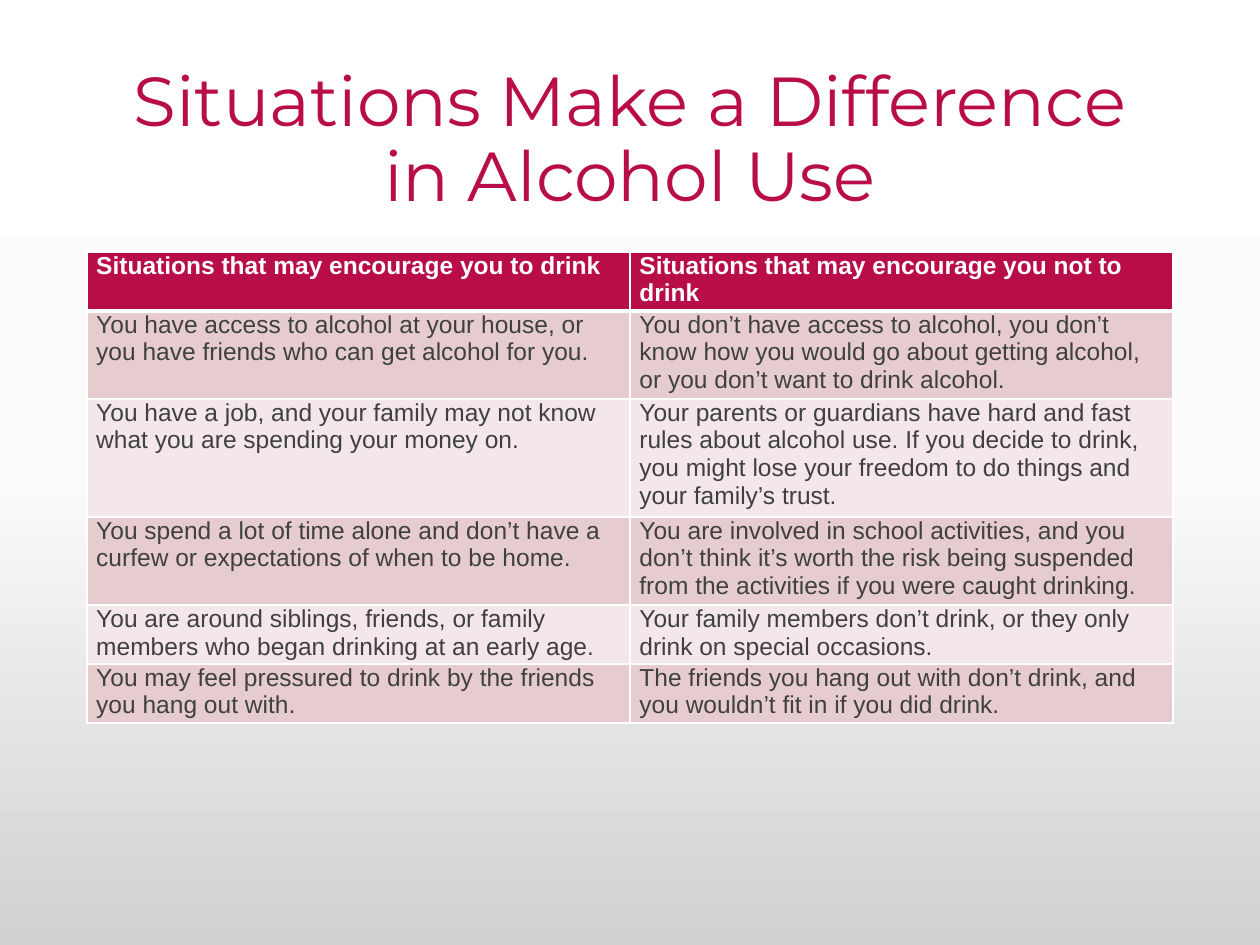
from copy import deepcopy

from lxml import etree
from pptx import Presentation
from pptx.dml.color import RGBColor
from pptx.enum import text
from pptx.oxml import ns
from pptx.util import Pt

COLOURS = {
    "accent": "B80D48",
    "body": "3F403F",
    "white": "FFFFFF",
    "odd_row": "E6CCCF",
    "even_row": "F3E7E9",
    "middle": "FBFBFB",
    "bottom": "D1D1D1",
}

HEADINGS = (
    "Situations that may encourage you to drink",
    "Situations that may encourage you not to drink",
)
SITUATIONS = [
    ("You have access to alcohol at your house, or you have friends who can get alcohol for you.",
     "You don’t have access to alcohol, you don’t know how you would go about getting alcohol, "
     "or you don’t want to drink alcohol."),
    ("You have a job, and your family may not know what you are spending your money on.",
     "Your parents or guardians have hard and fast rules about alcohol use. If you decide to drink, "
     "you might lose your freedom to do things and your family’s trust."),
    ("You spend a lot of time alone and don’t have a curfew or expectations of when to be home.",
     "You are involved in school activities, and you don’t think it’s worth the risk being suspended "
     "from the activities if you were caught drinking."),
    ("You are around siblings, friends, or family members who began drinking at an early age.",
     "Your family members don’t drink, or they only drink on special occasions."),
    ("You may feel pressured to drink by the friends you hang out with.",
     "The friends you hang out with don’t drink, and you wouldn’t fit in if you did drink."),
]


def colour(name):
    return RGBColor.from_string(COLOURS[name])


class SlideWriter:
    title_font = "Montserrat"
    body_font = "Arial"
    left, width = 49.6, 620.8

    def __init__(self, page):
        self.page = page

    def background(self, names):
        fill = self.page.background.fill
        fill.gradient()
        fill.gradient_angle = 270
        first = fill._fill._gradFill.gsLst[0]
        first.addnext(deepcopy(first))
        for index, (stop, name) in enumerate(zip(fill.gradient_stops, names)):
            stop.position = index / (len(names) - 1)
            stop.color.rgb = colour(name)

    def span(self, para, words, font, size, name, bold=False):
        span = para.add_run()
        span.text = words
        span.font.name = font
        span.font.size = Pt(size)
        span.font.bold = bold
        span.font.color.rgb = colour(name)

    def title(self, words, top, height):
        box = self.page.shapes.add_textbox(Pt(self.left), Pt(top), Pt(self.width), Pt(height))
        frame = box.text_frame
        frame.word_wrap = True
        frame.vertical_anchor = text.MSO_ANCHOR.MIDDLE
        para = frame.paragraphs[0]
        para.alignment = text.PP_ALIGN.CENTER
        para.line_spacing = 0.9
        self.span(para, words, self.title_font, 39.6, "accent")

    def borders(self, cell, widths):
        properties = cell._tc.get_or_add_tcPr()
        for index, (side, width) in enumerate(widths.items()):
            line = etree.Element(ns.qn(f"a:ln{side}"), w=str(Pt(width)))
            fill = etree.SubElement(line, ns.qn("a:solidFill"))
            etree.SubElement(fill, ns.qn("a:srgbClr"), val=COLOURS["white"])
            properties.insert(index, line)

    def cell(self, cell, words, fill, ink, bold, widths):
        cell.margin_left = cell.margin_right = Pt(5.4)
        cell.margin_top = cell.margin_bottom = 0
        cell.fill.solid()
        cell.fill.fore_color.rgb = colour(fill)
        self.borders(cell, widths)
        self.span(cell.text_frame.paragraphs[0], words, self.body_font, 14, ink, bold)

    def table(self, rows, top, row_height):
        columns = len(rows[0])
        table = self.page.shapes.add_table(
            len(rows), columns, Pt(self.left), Pt(top), Pt(self.width), Pt(row_height * len(rows))
        ).table
        for r, row in enumerate(rows):
            header = r == 0
            fill = "accent" if header else "odd_row" if r % 2 else "even_row"
            ink = "white" if header else "body"
            widths = {"L": 1, "R": 1, "T": 3 if r == 1 else 1, "B": 3 if header else 1}
            for c, words in enumerate(row):
                self.cell(table.cell(r, c), words, fill, ink, header, widths)


def main():
    deck = Presentation()
    deck.slide_width, deck.slide_height = Pt(720), Pt(540)
    writer = SlideWriter(deck.slides.add_slide(deck.slide_layouts[6]))
    writer.background(["white", "middle", "bottom"])
    writer.title("Situations Make a Difference in Alcohol Use", 28.8, 104.4)
    writer.table([HEADINGS, *SITUATIONS], 144, 29.5)
    deck.save("out.pptx")


if __name__ == "__main__":
    main()
